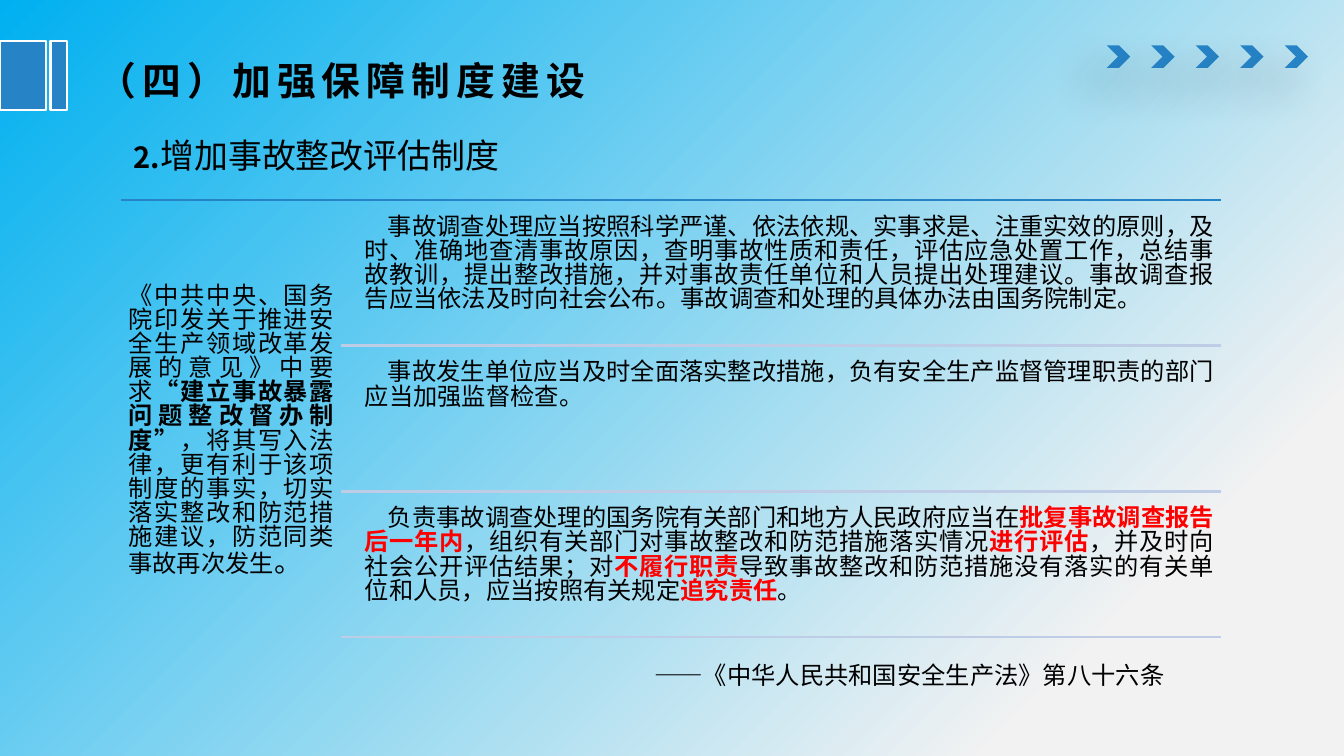
"""Build the slide on the accident rectification assessment system."""
from dataclasses import dataclass

import lxml.etree
import pptx
import pptx.dml.color
import pptx.enum.dml
import pptx.enum.lang
import pptx.enum.shapes
import pptx.enum.text
import pptx.oxml.ns
import pptx.util

Pt = pptx.util.Pt
RGBColor = pptx.dml.color.RGBColor
Shapes = pptx.enum.shapes.MSO_SHAPE
qn = pptx.oxml.ns.qn

BLACK = RGBColor(0x00, 0x00, 0x00)
WHITE = RGBColor(0xFF, 0xFF, 0xFF)
RED = RGBColor(0xFF, 0x00, 0x00)
BLUE = RGBColor(0x26, 0x83, 0xC6)
PALE_BLUE = RGBColor(0xBE, 0xCD, 0xE5)
SKY = RGBColor(0x00, 0xB0, 0xF0)
MIST = RGBColor(0xF2, 0xF2, 0xF2)
FONT = "Noto Sans CJK SC"

RULE_RIGHT = 1007.3
ROW_TOP, ROW_HEIGHT, ROW_PITCH = 170.6, 114.5, 120.24


@dataclass(frozen=True)
class Span:
    """A run of text with its look."""
    text: str
    size: float = 20
    bold: bool = False
    color: RGBColor = BLACK
    spacing: float = 0


@dataclass(frozen=True)
class TextBlock:
    """A one-paragraph text box; margins run left, top, right, bottom."""
    left: float
    top: float
    width: float
    height: float
    spans: tuple[Span, ...]
    margins: tuple[float, float, float, float] = (5.76, 7.4, 5.76, 5.76)
    indent: float = 0
    line_spacing: float | pptx.util.Length = 0.83
    justified: bool = True
    middle: bool = False


@dataclass(frozen=True)
class Rule:
    """A horizontal line ending at the common right edge."""
    left: float
    top: float
    color: RGBColor


def key(text: str) -> Span:
    """Return an emphasised red span."""
    return Span(text, bold=True, color=RED)


ROWS = (
    (Span("事故调查处理应当按照科学严谨、依法依规、实事求是、注重实效的原则，及时、准确地查清事故原因，"
          "查明事故性质和责任，评估应急处置工作，总结事故教训，提出整改措施，并对事故责任单位和人员提出处理建议。"
          "事故调查报告应当依法及时向社会公布。事故调查和处理的具体办法由国务院制定。"),),
    (Span("事故发生单位应当及时全面落实整改措施，负有安全生产监督管理职责的部门应当加强监督检查。"),),
    (Span("负责事故调查处理的国务院有关部门和地方人民政府应当在"),
     key("批复事故调查报告后一年内"),
     Span("，组织有关部门对事故整改和防范措施落实情况"),
     key("进行评估"),
     Span("，并及时向社会公开评估结果；对"),
     key("不履行职责"),
     Span("导致事故整改和防范措施没有落实的有关单位和人员，应当按照有关规定"),
     key("追究责任"),
     Span("。")),
)
TITLE = TextBlock(70.6, 28.1, 853.9, 76.3,
                  (Span("（四）加强保障制度建设", 32, True, spacing=5),),
                  margins=(10, 5, 10, 5), line_spacing=1.0, justified=False, middle=True)
SUBTITLE = TextBlock(55.4, 102.2, 967.7, 92.2,
                     (Span("2.", 24, True), Span("增加事故整改评估制度", 28)),
                     margins=(7.2, 6, 7.2, 3.6), indent=47.9, line_spacing=Pt(36))
OPINION = TextBlock(100.1, 164.9, 181.4, 366.5,
                    (Span("《中共中央、国务院印发关于推进安全生产领域改革发展的意见》中要求"),
                     Span("“建立事故暴露问题整改督办制度”", bold=True),
                     Span("，将其写入法律，更有利于该项制度的事实，切实落实整改和防范措施建议，"
                          "防范同类事故再次发生"),
                     Span("。", 23)),
                    margins=(5.76, 70, 5.76, 5.76))
CITATION = TextBlock(532.8, 543.6, 474.5, 31.7,
                     (Span("——《中华人民共和国安全生产法》第八十六条"),),
                     margins=(7.2, 5.2, 7.2, 3.6))


def paint_background(page) -> None:
    """Fill the page with a gradient spreading from the top left corner."""
    fill = page.background.fill
    fill.gradient()
    for stop, position, color in zip(fill.gradient_stops, (0, 0.83), (SKY, MIST)):
        stop.position = position
        stop.color.rgb = color
    gradient = page.element.find(".//" + qn("a:gradFill"))
    gradient.remove(gradient.find(qn("a:lin")))
    circle = lxml.etree.SubElement(gradient, qn("a:path"), path="circle")
    lxml.etree.SubElement(circle, qn("a:fillToRect"), r="100000", b="100000")


def draw_shape(page, kind: Shapes, left: float, top: float, width: float, height: float):
    """Draw a blue preset shape without line or shadow."""
    shape = page.shapes.add_shape(kind, Pt(left), Pt(top), Pt(width), Pt(height))
    shape.shadow.inherit = False
    shape.fill.solid()
    shape.fill.fore_color.rgb = BLUE
    shape.line.fill.background()
    return shape


def draw_chevron(page, left: float) -> None:
    """Draw a chevron with a soft shadow below it."""
    chevron = draw_shape(page, Shapes.CHEVRON, left, 37.4, 19.4, 18.7)
    effects = chevron.element.spPr.find(qn("a:effectLst"))
    shadow = lxml.etree.SubElement(effects, qn("a:outerShdw"), blurRad=str(Pt(36)),
                                   dist=str(Pt(24)), dir=str(130 * 60000), rotWithShape="0")
    color = lxml.etree.SubElement(shadow, qn("a:srgbClr"), val=str(BLACK))
    lxml.etree.SubElement(color, qn("a:alpha"), val="38000")


def draw_bar(page, left: float, width: float) -> None:
    """Draw a white-edged bar beside the title."""
    bar = draw_shape(page, Shapes.RECTANGLE, left, 33.8, width, 56.9)
    bar.line.color.rgb = WHITE
    bar.line.width = Pt(2)


def draw_rule(page, rule: Rule) -> None:
    """Draw a horizontal rule."""
    line = page.shapes.add_connector(pptx.enum.shapes.MSO_CONNECTOR.STRAIGHT, Pt(rule.left),
                                     Pt(rule.top), Pt(RULE_RIGHT), Pt(rule.top))
    line.line.color.rgb = rule.color
    line.line.width = Pt(2)
    lxml.etree.SubElement(line.element.spPr, qn("a:effectLst"))


def draw_text(page, block: TextBlock) -> None:
    """Draw a text block run by run."""
    box = page.shapes.add_textbox(Pt(block.left), Pt(block.top), Pt(block.width), Pt(block.height))
    frame = box.text_frame
    frame.word_wrap = True
    frame.margin_left, frame.margin_top, frame.margin_right, frame.margin_bottom = map(
        Pt, block.margins)
    anchors = pptx.enum.text.MSO_ANCHOR
    frame.vertical_anchor = anchors.MIDDLE if block.middle else anchors.TOP
    para = frame.paragraphs[0]
    aligns = pptx.enum.text.PP_ALIGN
    para.alignment = aligns.JUSTIFY if block.justified else aligns.LEFT
    para.line_spacing = block.line_spacing
    para._p.get_or_add_pPr().set("indent", str(Pt(block.indent)))
    for span in block.spans:
        run = para.add_run()
        run.text = span.text
        run.font.name = FONT
        run.font.size = Pt(span.size)
        run.font.bold = span.bold
        run.font.color.rgb = span.color
        run.font.language_id = pptx.enum.lang.MSO_LANGUAGE_ID.SIMPLIFIED_CHINESE
        properties = run._r.get_or_add_rPr()
        properties.set("spc", str(round(span.spacing * 100)))
        latin = properties.find(qn("a:latin"))
        latin.addnext(latin.makeelement(qn("a:ea"), {"typeface": FONT}))


def main() -> None:
    """Build and save the deck."""
    deck = pptx.Presentation()
    deck.slide_width, deck.slide_height = Pt(1108.8), Pt(623.5)
    page = deck.slides.add_slide(deck.slide_layouts[6])
    paint_background(page)
    for index in range(5):
        draw_chevron(page, 913 + 36.7 * index)
    for left, width in ((0, 38.2), (41.8, 13.7)):
        draw_bar(page, left, width)
    draw_rule(page, Rule(100.1, 164.9, BLUE))
    for block in (TITLE, SUBTITLE, OPINION, CITATION):
        draw_text(page, block)
    for index, spans in enumerate(ROWS):
        top = ROW_TOP + ROW_PITCH * index
        draw_text(page, TextBlock(295.2, top, 712.1, ROW_HEIGHT, spans, indent=19))
        draw_rule(page, Rule(281.5, top + ROW_HEIGHT, PALE_BLUE))
    deck.save("out.pptx")


if __name__ == "__main__":
    main()
